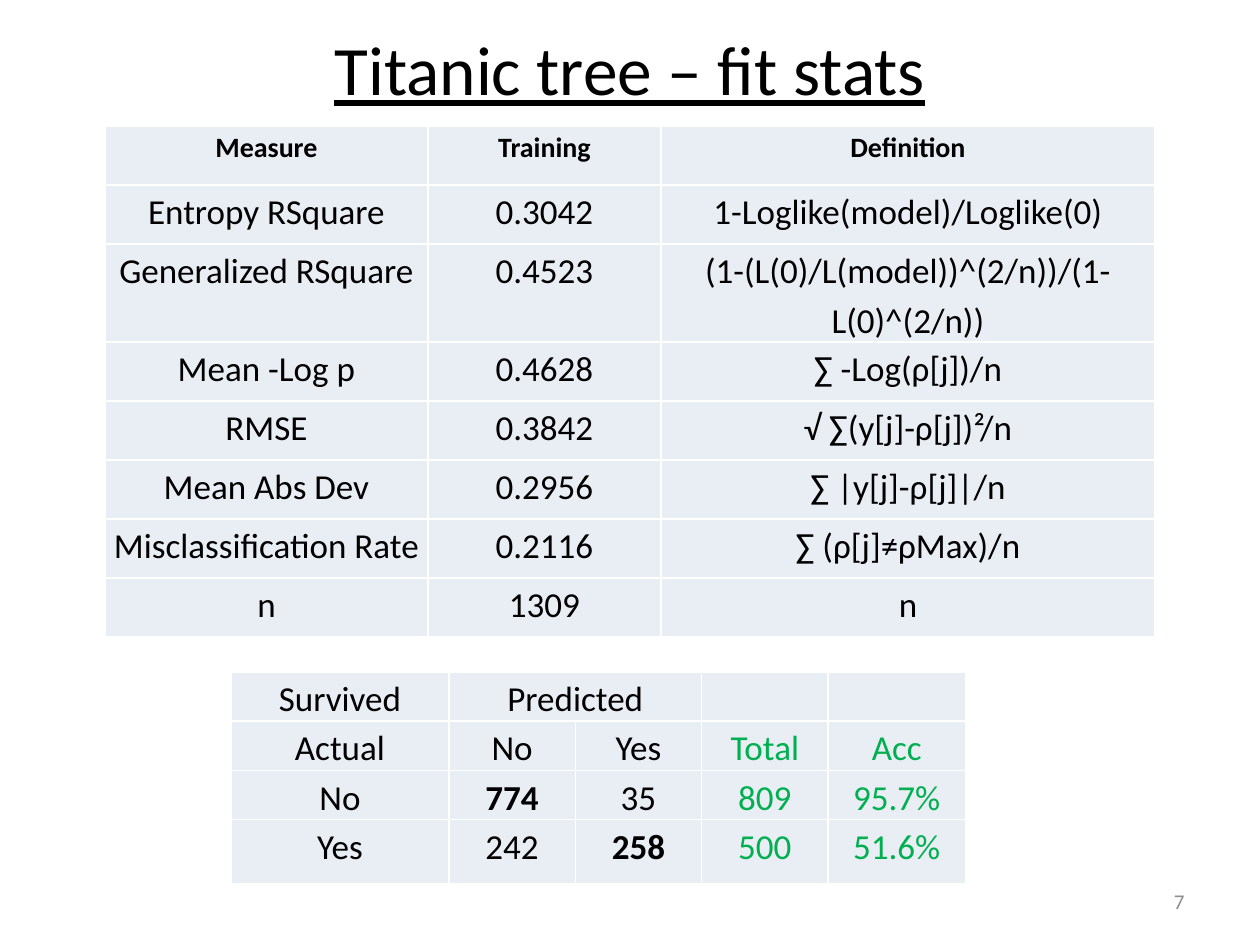
from pptx import Presentation
from pptx.dml.color import RGBColor
from pptx.enum.text import MSO_ANCHOR as Anchor, PP_ALIGN as Align
from pptx.util import Pt

BLACK = RGBColor(0x00, 0x00, 0x00)
GRAY = RGBColor(0x8C, 0x8C, 0x8C)
GREEN = RGBColor(0x00, 0xB0, 0x50)
PALE = RGBColor(0xE9, 0xED, 0xF4)

TITLE = "Titanic tree – fit stats"
PAGE_NUMBER = "7"

FIT_STATS = [
    ("Measure", "Training", "Definition"),
    ("Entropy RSquare", "0.3042", "1-Loglike(model)/Loglike(0)"),
    ("Generalized RSquare", "0.4523", "(1-(L(0)/L(model))^(2/n))/(1-L(0)^(2/n))"),
    ("Mean -Log p", "0.4628", "∑ -Log(ρ[j])/n"),
    ("RMSE", "0.3842", "√ ∑(y[j]-ρ[j])²/n"),
    ("Mean Abs Dev", "0.2956", "∑ |y[j]-ρ[j]|/n"),
    ("Misclassification Rate", "0.2116", "∑ (ρ[j]≠ρMax)/n"),
    ("n", "1309", "n"),
]
CONFUSION = [
    ("Survived", "Predicted", "", "", ""),
    ("Actual", "No", "Yes", "Total", "Acc"),
    ("No", "774", "35", "809", "95.7%"),
    ("Yes", "242", "258", "500", "51.6%"),
]
CORRECT_CELLS = {(2, 1), (3, 2)}
FIRST_SUMMARY_COLUMN = 3


def write(frame, text, size=20, color=BLACK, bold=False, underline=False,
          align=Align.CENTER, spacing=None):
    para = frame.paragraphs[0]
    para.alignment = align
    para.line_spacing = spacing
    span = para.add_run()
    span.text = text
    font = span.font
    font.name, font.size, font.bold = "Calibri", Pt(size), bold
    font.underline = underline
    font.color.rgb = color


def add_label(page, text, left, top, width, height, **style):
    box = page.shapes.add_textbox(Pt(left), Pt(top), Pt(width), Pt(height))
    frame = box.text_frame
    frame.word_wrap = True
    frame.vertical_anchor = Anchor.MIDDLE
    write(frame, text, **style)


def add_grid(page, rows, left, top, widths, heights, style_of):
    """Add a table; style_of(row, column) gives the text format of a cell."""
    table = page.shapes.add_table(
        len(rows), len(widths), Pt(left), Pt(top),
        Pt(sum(widths)), Pt(sum(heights))).table
    table.first_row = table.horz_banding = False
    for column, width in zip(table.columns, widths):
        column.width = Pt(width)
    for row, height in zip(table.rows, heights):
        row.height = Pt(height)
    for r, texts in enumerate(rows):
        for c, text in enumerate(texts):
            cell = table.cell(r, c)
            cell.fill.solid()
            cell.fill.fore_color.rgb = PALE
            cell.margin_left = cell.margin_right = Pt(2.4)
            cell.margin_top = cell.margin_bottom = 0
            if text:
                write(cell.text_frame, text, spacing=1.15, **style_of(r, c))
    return table


def fit_style(row, column):
    return {"size": 16, "bold": True} if row == 0 else {}


def confusion_style(row, column):
    return {"color": GREEN if column >= FIRST_SUMMARY_COLUMN else BLACK,
            "bold": (row, column) in CORRECT_CELLS}


def main():
    deck = Presentation()
    deck.slide_width, deck.slide_height = Pt(720), Pt(540)
    page = deck.slides.add_slide(deck.slide_layouts[6])

    # Title and page number
    add_label(page, TITLE, 36, 12, 648, 54, size=39.6, underline=True)
    add_label(page, PAGE_NUMBER, 516, 500.5, 168, 28.75,
              size=12, color=GRAY, align=Align.RIGHT)

    # Fit statistics; the third row holds a two-line formula
    heights = [33.75] * len(FIT_STATS)
    heights[2] = 56
    add_grid(page, FIT_STATS, 60, 72, [184.5, 133.25, 282.25], heights, fit_style)

    # Confusion matrix
    matrix = add_grid(page, CONFUSION, 132, 384, [124.5, 72.25, 72.25, 72.25, 78.5],
                      [28.1, 28.1, 28.1, 37], confusion_style)
    matrix.cell(0, 1).merge(matrix.cell(0, 2))

    deck.save("out.pptx")


if __name__ == "__main__":
    main()
